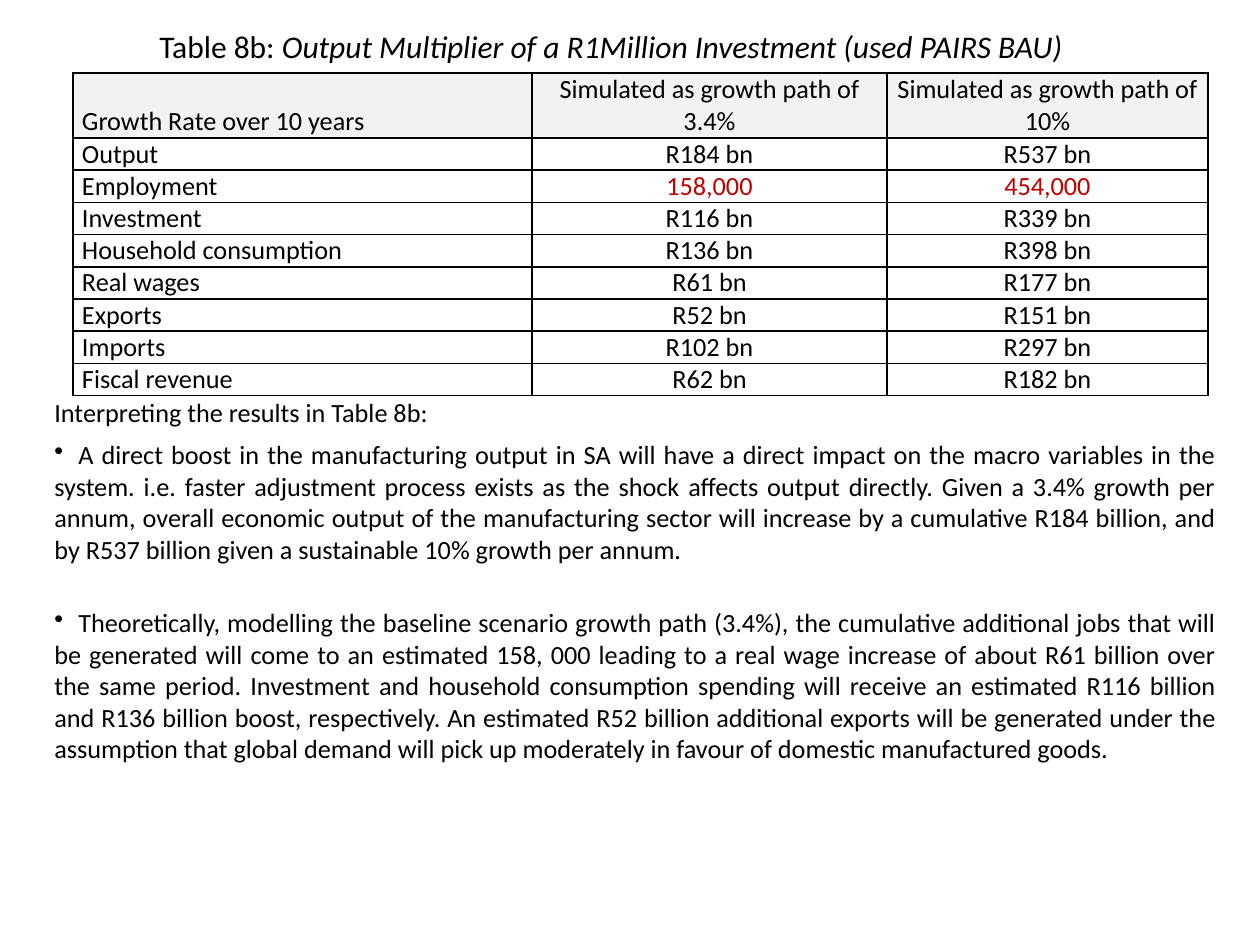
from dataclasses import dataclass

from lxml.etree import SubElement
from pptx import Presentation
from pptx.dml.color import RGBColor
from pptx.enum.text import MSO_ANCHOR, MSO_AUTO_SIZE, PP_ALIGN
from pptx.oxml.ns import qn
from pptx.util import Emu, Inches, Pt

PX_PER_INCH = 126
FONT = "Calibri"
BODY_SIZE = 15
TITLE_SIZE = 18
BLACK = RGBColor(0x00, 0x00, 0x00)
WHITE = RGBColor(0xFF, 0xFF, 0xFF)
HEADER_GREY = RGBColor(0xF2, 0xF2, 0xF2)
HIGHLIGHT_RED = RGBColor(0xC0, 0x00, 0x00)

COLUMN_WIDTHS = (459, 355, 321)
HEADER_HEIGHT = 65
ROW_HEIGHT = 32
CELL_INSET = 9
BULLET_TAB = 24


@dataclass(frozen=True)
class TableRow:
    label: str
    baseline: str
    fast: str
    fill: RGBColor = WHITE
    value_color: RGBColor = BLACK


@dataclass(frozen=True)
class Note:
    text: str
    bulleted: bool = True
    before: int = 0
    after: int = 0


ROWS = (
    TableRow("Growth Rate over 10 years", "Simulated as growth path of 3.4%",
             "Simulated as growth path of 10%", fill=HEADER_GREY),
    TableRow("Output", "R184 bn", "R537 bn"),
    TableRow("Employment", "158,000", "454,000", value_color=HIGHLIGHT_RED),
    TableRow("Investment", "R116 bn", "R339 bn"),
    TableRow("Household consumption", "R136 bn", "R398 bn"),
    TableRow("Real wages", "R61 bn", "R177 bn"),
    TableRow("Exports", "R52 bn", "R151 bn"),
    TableRow("Imports", "R102 bn", "R297 bn"),
    TableRow("Fiscal revenue", "R62 bn", "R182 bn"),
)

NOTES = (
    Note("Interpreting the results in Table 8b:", bulleted=False),
    Note("A direct boost in the manufacturing output in SA will have a direct impact on the "
         "macro variables in the system. i.e. faster adjustment process exists as the shock "
         "affects output directly. Given a 3.4% growth per annum, overall economic output of "
         "the manufacturing sector will increase by a cumulative R184 billion, and by R537 "
         "billion given a sustainable 10% growth per annum.", before=6, after=6),
    Note("Theoretically, modelling the baseline scenario growth path (3.4%), the cumulative "
         "additional jobs that will be generated will come to an estimated 158, 000 leading to "
         "a real wage increase of about R61 billion over the same period. Investment and "
         "household consumption spending will receive an estimated R116 billion and R136 "
         "billion boost, respectively. An estimated R52 billion additional exports will be "
         "generated under the assumption that global demand will pick up moderately in favour "
         "of domestic manufactured goods.", before=18),
)


def px(length: int) -> Emu:
    return Emu(round(length * Inches(1) / PX_PER_INCH))


def style_font(font, size: int, color: RGBColor = BLACK) -> None:
    font.name = FONT
    font.size = Pt(size)
    font.color.rgb = color


def add_borders(cell) -> None:
    properties = cell._tc.get_or_add_tcPr()
    for side in ("a:lnL", "a:lnR", "a:lnT", "a:lnB"):
        line = SubElement(properties, qn(side), w=str(Pt(1)))
        fill = SubElement(line, qn("a:solidFill"))
        SubElement(fill, qn("a:srgbClr"), val=str(BLACK))


def fill_cell(cell, text: str, align: PP_ALIGN, color: RGBColor, fill: RGBColor) -> None:
    cell.margin_left = cell.margin_right = px(CELL_INSET)
    cell.margin_top = cell.margin_bottom = 0
    cell.vertical_anchor = MSO_ANCHOR.BOTTOM
    add_borders(cell)
    cell.fill.solid()
    cell.fill.fore_color.rgb = fill
    cell.text_frame.text = text
    para = cell.text_frame.paragraphs[0]
    para.alignment = align
    style_font(para.runs[0].font, BODY_SIZE, color)


def add_multiplier_table(page, left: int, top: int) -> None:
    height = HEADER_HEIGHT + ROW_HEIGHT * (len(ROWS) - 1)
    table = page.shapes.add_table(len(ROWS), len(COLUMN_WIDTHS), px(left), px(top),
                                  px(sum(COLUMN_WIDTHS)), px(height)).table
    table.first_row = table.horz_banding = False
    for column, width in zip(table.columns, COLUMN_WIDTHS):
        column.width = px(width)
    for index, row in enumerate(ROWS):
        table.rows[index].height = px(ROW_HEIGHT if index else HEADER_HEIGHT)
        fill_cell(table.cell(index, 0), row.label, PP_ALIGN.LEFT, BLACK, row.fill)
        for column, value in enumerate((row.baseline, row.fast), start=1):
            fill_cell(table.cell(index, column), value, PP_ALIGN.CENTER,
                      row.value_color, row.fill)


def add_text_frame(page, left: int, top: int, width: int, height: int):
    box = page.shapes.add_textbox(px(left), px(top), px(width), px(height))
    frame = box.text_frame
    frame.word_wrap = True
    frame.auto_size = MSO_AUTO_SIZE.SHAPE_TO_FIT_TEXT
    return frame


def add_bullet(para) -> None:
    """Put a bullet on the first line; later lines start at the left edge."""
    properties = para._p.get_or_add_pPr()
    properties.set("marL", "0")
    properties.set("indent", "0")
    SubElement(properties, qn("a:buChar"), char="•")
    tabs = SubElement(properties, qn("a:tabLst"))
    SubElement(tabs, qn("a:tab"), pos=str(px(BULLET_TAB)), algn="l")


def add_title(page) -> None:
    para = add_text_frame(page, 147, 21, 998, 51).paragraphs[0]
    for text, italic in (("Table 8b: ", False),
                         ("Output Multiplier of a R1Million Investment (used PAIRS BAU)", True)):
        span = para.add_run()
        span.text = text
        style_font(span.font, TITLE_SIZE)
        span.font.italic = italic


def add_notes(page) -> None:
    frame = add_text_frame(page, 42, 388, 1187, 384)
    frame.vertical_anchor = MSO_ANCHOR.MIDDLE
    for index, note in enumerate(NOTES):
        para = frame.add_paragraph() if index else frame.paragraphs[0]
        para.text = f"\t{note.text}" if note.bulleted else note.text
        if note.bulleted:
            add_bullet(para)
        para.alignment = PP_ALIGN.JUSTIFY
        para.space_before = Pt(note.before)
        para.space_after = Pt(note.after)
        style_font(para.runs[0].font, BODY_SIZE)


def main() -> None:
    deck = Presentation()
    deck.slide_width, deck.slide_height = Inches(10), Inches(7.5)
    page = deck.slides.add_slide(deck.slide_layouts[6])
    add_multiplier_table(page, 73, 73)
    add_notes(page)
    add_title(page)
    deck.save("out.pptx")


if __name__ == "__main__":
    main()
